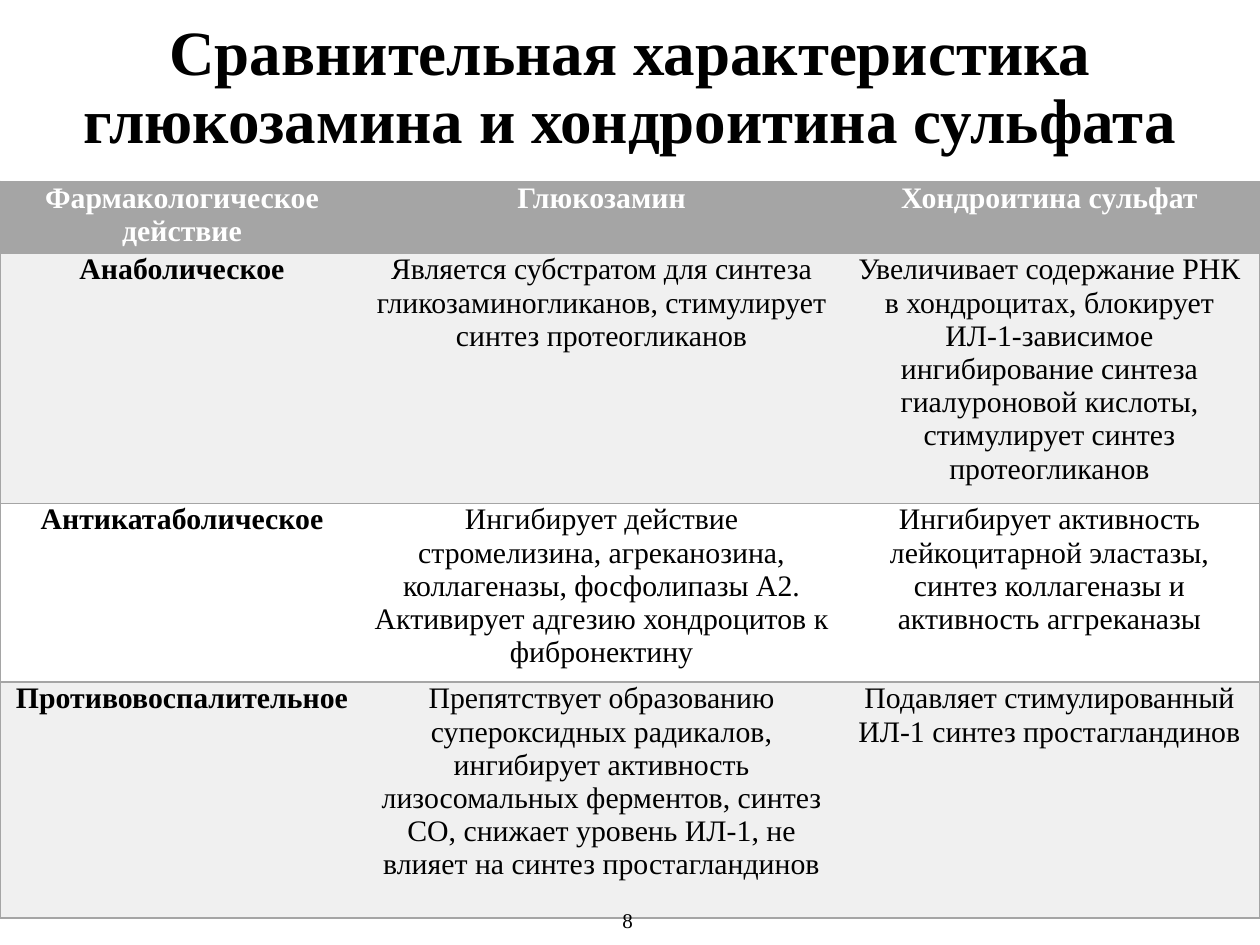
import pptx
import pptx.util
import pptx.dml.color
import pptx.enum.text
import pptx.oxml
import pptx.oxml.ns

Inches = pptx.util.Inches
MID = pptx.enum.text.MSO_ANCHOR.MIDDLE
GRAY = "A5A5A5"


def tint(code):
    return pptx.dml.color.RGBColor.from_string(code)


def write(frame, text, size=17, bold=False, color="000000", space=1.0, side=0.1, edge=0.05, anchor=None):
    frame.word_wrap = True
    frame.margin_left = frame.margin_right = Inches(side)
    frame.margin_top = frame.margin_bottom = Inches(edge)
    frame.vertical_anchor = anchor
    line = frame.paragraphs[0]
    line.alignment = pptx.enum.text.PP_ALIGN.CENTER
    line.line_spacing = space
    run = line.add_run()
    run.text = text
    run.font.name = "Times New Roman"
    run.font.size = pptx.util.Pt(size)
    run.font.bold = bold
    run.font.color.rgb = tint(color)


deck = pptx.Presentation()
deck.slide_width, deck.slide_height = Inches(10), Inches(7.5)
slide = deck.slides.add_slide(deck.slide_layouts[6])

title = slide.shapes.add_textbox(Inches(0), Inches(0.16), Inches(10), Inches(1.09))
write(title.text_frame, "Сравнительная характеристика глюкозамина и хондроитина сульфата",
      size=36, bold=True, space=0.9, anchor=MID)

rows = [
    ("Фармакологическое действие", "Глюкозамин", "Хондроитина сульфат"),
    ("Анаболическое",
     "Является субстратом для синтеза гликозаминогликанов, стимулирует синтез протеогликанов",
     "Увеличивает содержание РНК в хондроцитах, блокирует ИЛ-1-зависимое ингибирование "
     "синтеза гиалуроновой кислоты, стимулирует синтез протеогликанов"),
    ("Антикатаболическое",
     "Ингибирует действие стромелизина, агреканозина, коллагеназы, фосфолипазы А2. "
     "Активирует адгезию хондроцитов к фибронектину",
     "Ингибирует активность лейкоцитарной эластазы, синтез коллагеназы и активность аггреканазы"),
    ("Противовоспалительное",
     "Препятствует образованию супероксидных радикалов, ингибирует активность лизосомальных "
     "ферментов, синтез CO, снижает уровень ИЛ-1, не влияет на синтез простагландинов",
     "Подавляет стимулированный ИЛ-1 синтез простагландинов"),
]
widths = [2.89, 3.77, 3.34]
heights = [0.57, 1.87, 1.42, 1.87]
fills = [GRAY, "F0F0F0", "FFFFFF", "F0F0F0"]

grid = slide.shapes.add_table(4, 3, Inches(0), Inches(1.44), Inches(10), Inches(sum(heights))).table
grid.horz_banding = False
for col, width in zip(grid.columns, widths):
    col.width = Inches(width)
for row, height in zip(grid.rows, heights):
    row.height = Inches(height)

solid = f'<a:solidFill><a:srgbClr val="{GRAY}"/></a:solidFill>'
for r, texts in enumerate(rows):
    for c, text in enumerate(texts):
        cell = grid.cell(r, c)
        head = r == 0
        write(cell.text_frame, text, bold=head or c == 0, color="FFFFFF" if head else "000000")
        cell.margin_left = cell.margin_right = Inches(0.07)
        cell.margin_top = cell.margin_bottom = 0
        cell.vertical_anchor = pptx.enum.text.MSO_ANCHOR.TOP
        props = cell._tc.get_or_add_tcPr()
        drawn = {"L": c == 0, "R": c == 2, "T": True, "B": True}
        for side, shown in drawn.items():
            paint = solid if shown else "<a:noFill/>"
            props.append(pptx.oxml.parse_xml(
                f'<a:ln{side} {pptx.oxml.ns.nsdecls("a")} w="12700">{paint}</a:ln{side}>'))
        cell.fill.solid()
        cell.fill.fore_color.rgb = tint(fills[r])

number = slide.shapes.add_textbox(Inches(3.29), Inches(7.1), Inches(3.38), Inches(0.4))
write(number.text_frame, "8", size=12, anchor=MID)

deck.save("out.pptx")
